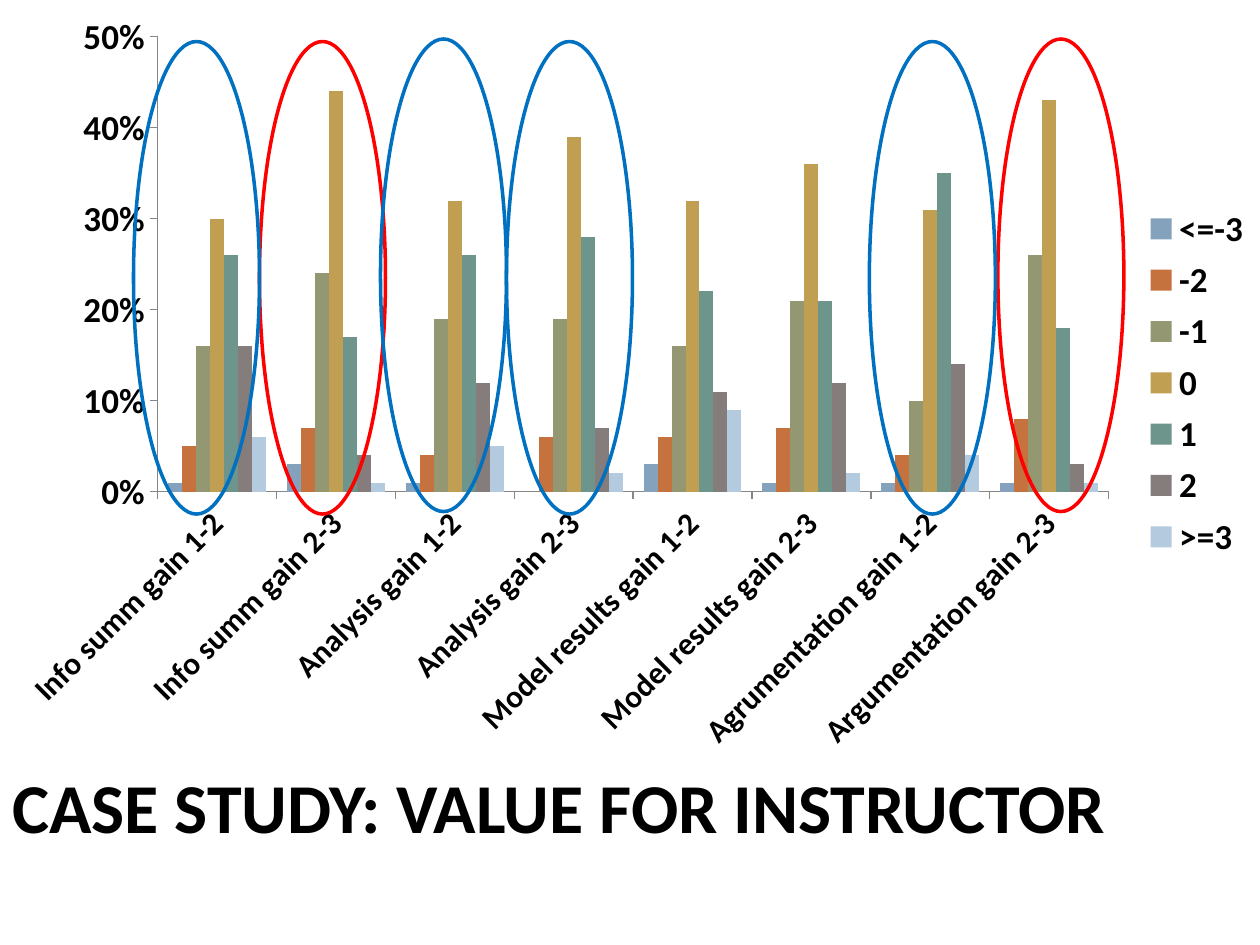
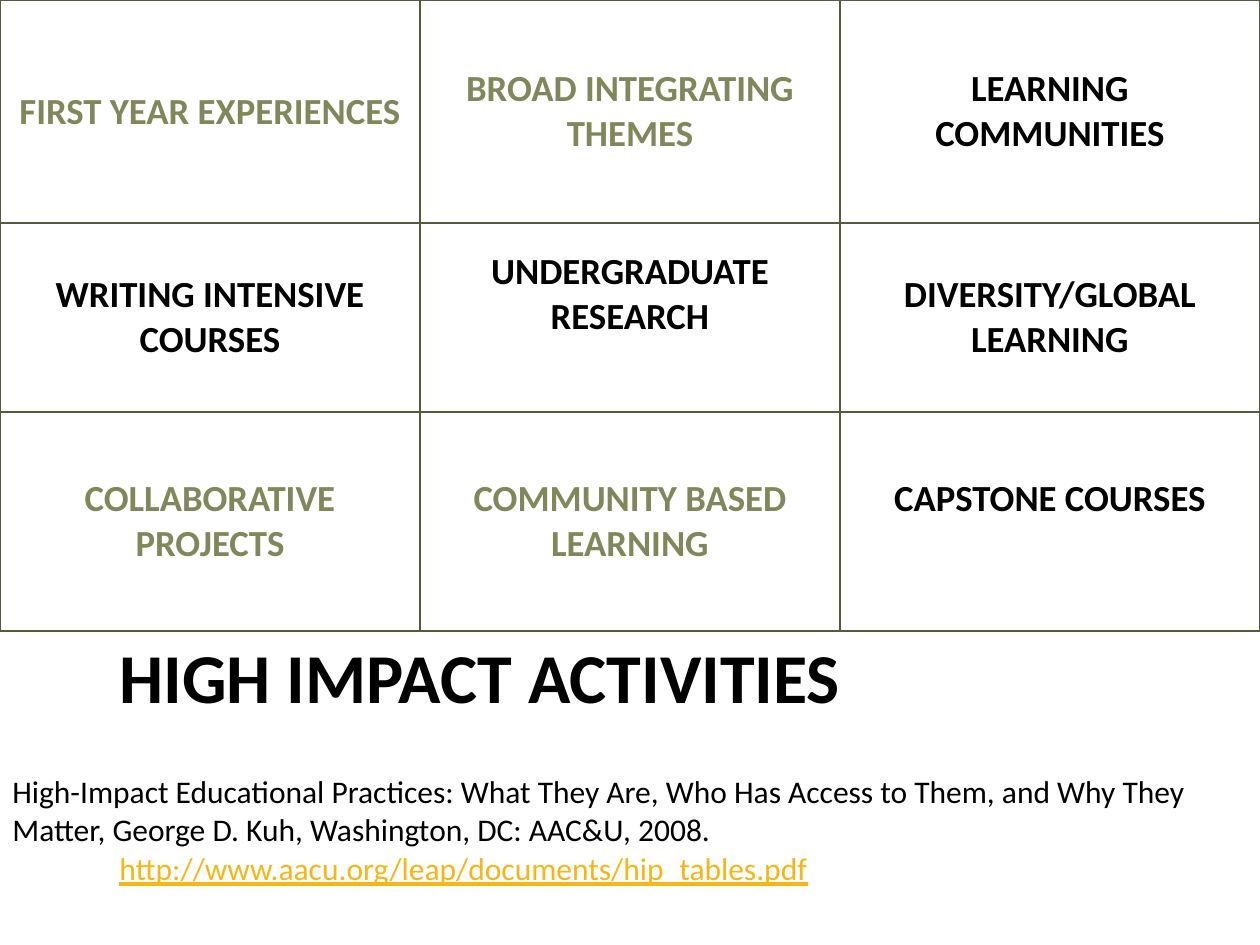
from lxml.etree import SubElement
from pptx import Presentation
from pptx.chart.data import CategoryChartData
from pptx.dml.color import RGBColor
from pptx.enum.chart import XL_CHART_TYPE, XL_LEGEND_POSITION, XL_TICK_MARK
from pptx.enum.shapes import MSO_SHAPE
from pptx.enum.text import MSO_ANCHOR, PP_ALIGN
from pptx.oxml.ns import qn
from pptx.util import Inches, Pt

FACE = "Calibri"
BLACK, OLIVE, GOLD = "000000", "81875A", "F7B615"
EDGE, GRAY = "565A3C", "868686"
RED, BLUE = "FF0000", "0070C0"

CATS = ["Info summ gain 1-2", "Info summ gain 2-3",
        "Analysis gain 1-2", "Analysis gain 2-3",
        "Model results gain 1-2", "Model results gain 2-3",
        "Agrumentation gain 1-2", "Argumentation gain 2-3"]
SERIES = [
    ("<=-3", "84A2BB", [0.01, 0.03, 0.01, 0, 0.03, 0.01, 0.01, 0.01]),
    ("-2", "C5723F", [0.05, 0.07, 0.04, 0.06, 0.06, 0.07, 0.04, 0.08]),
    ("-1", "939873", [0.16, 0.24, 0.19, 0.19, 0.16, 0.21, 0.1, 0.26]),
    ("0", "C09E52", [0.3, 0.44, 0.32, 0.39, 0.32, 0.36, 0.31, 0.43]),
    ("1", "6D958B", [0.26, 0.17, 0.26, 0.28, 0.22, 0.21, 0.35, 0.18]),
    ("2", "857C7C", [0.16, 0.04, 0.12, 0.07, 0.11, 0.12, 0.14, 0.03]),
    (">=3", "B4CADE", [0.06, 0.01, 0.05, 0.02, 0.09, 0.02, 0.04, 0.01]),
]
RINGS = [(7.92, 0.31, RED), (2.06, 0.33, RED), (1.06, 0.33, BLUE),
         (6.9, 0.33, BLUE), (3.02, 0.31, BLUE), (4.02, 0.33, BLUE)]

ROWS = [1.77, 1.5, 1.74]
CELLS = [
    [("FIRST YEAR EXPERIENCES", OLIVE), ("BROAD INTEGRATING THEMES", OLIVE),
     ("LEARNING COMMUNITIES", BLACK)],
    [("WRITING INTENSIVE COURSES", BLACK), ("UNDERGRADUATE RESEARCH", BLACK),
     ("DIVERSITY/GLOBAL LEARNING", BLACK)],
    [("COLLABORATIVE PROJECTS", OLIVE), ("COMMUNITY BASED LEARNING", OLIVE),
     ("CAPSTONE COURSES", BLACK)],
]
RAISED = {"UNDERGRADUATE RESEARCH", "CAPSTONE COURSES"}
SOURCE = ("High-Impact Educational Practices: What They Are, Who Has Access to "
          "Them, and Why They Matter, George D. Kuh, Washington, DC: AAC&U, 2008.")
LINK = "http://www.aacu.org/leap/documents/hip_tables.pdf"


def rgb(code):
    """Turn a hex string into a colour."""
    return RGBColor.from_string(code)


def style(font, size, color=BLACK, bold=False):
    """Set face, size, colour and weight of a font."""
    font.name, font.size, font.bold = FACE, Pt(size), bold
    font.color.rgb = rgb(color)


def add_text(slide, text, box, size=18, color=BLACK, bold=False):
    """Add a wrapped text box and return its paragraph."""
    frame = slide.shapes.add_textbox(*map(Inches, box)).text_frame
    frame.word_wrap = True
    para = frame.paragraphs[0]
    para.text = text
    style(para.font, size, color, bold)
    return para


def add_title(slide, text, box):
    """Add a slide title."""
    add_text(slide, text, box, 40, bold=True)


def add_ring(slide, left, top, color):
    """Add a hollow ellipse around a group of columns."""
    ring = slide.shapes.add_shape(
        MSO_SHAPE.OVAL, Inches(left), Inches(top), Inches(1), Inches(3.75))
    ring.shadow.inherit = False
    ring.fill.background()
    ring.line.color.rgb = rgb(color)
    ring.line.width = Pt(2)


def place(part, index, box, inner=False):
    """Fix a chart part at fractions of the chart's size."""
    for old in part.findall(qn("c:layout")):
        part.remove(old)
    layout = SubElement(part, qn("c:layout"))
    part.insert(index, layout)
    manual = SubElement(layout, qn("c:manualLayout"))
    pairs = [("layoutTarget", "inner")] if inner else []
    pairs += [("xMode", "edge"), ("yMode", "edge"), *zip("xywh", box)]
    for tag, val in pairs:
        SubElement(manual, qn(f"c:{tag}")).set("val", str(val))


def set_axis(axis, size):
    """Style an axis and its labels."""
    axis.has_major_gridlines = False
    axis.major_tick_mark = XL_TICK_MARK.OUTSIDE
    axis.minor_tick_mark = XL_TICK_MARK.NONE
    axis.format.line.color.rgb = rgb(GRAY)
    style(axis.tick_labels.font, size, bold=True)


def add_gains(slide):
    """Add the column chart of gains."""
    data = CategoryChartData(number_format="0%")
    data.categories = CATS
    for name, _, vals in SERIES:
        data.add_series(name, vals)
    chart = slide.shapes.add_chart(
        XL_CHART_TYPE.COLUMN_CLUSTERED, 0, 0, Inches(10), Inches(6.08), data).chart
    style(chart.font, 10)
    chart.has_title = False
    plot = chart.plots[0]
    plot.gap_width, plot.overlap, plot.vary_by_categories = 150, 0, False
    plot.gap_width = 150
    for bar, (_, color, _) in zip(plot.series, SERIES):
        bar.format.fill.solid()
        bar.format.fill.fore_color.rgb = rgb(color)
        bar.invert_if_negative = False

    set_axis(chart.category_axis, 18)
    chart.category_axis._element.txPr.bodyPr.set("rot", "-2700000")
    scale = chart.value_axis
    set_axis(scale, 20)
    scale.minimum_scale, scale.maximum_scale, scale.major_unit = 0, 0.5, 0.1
    scale.tick_labels.number_format = "0%"
    scale.tick_labels.number_format_is_linked = False

    chart.has_legend = True
    legend = chart.legend
    legend.position = XL_LEGEND_POSITION.RIGHT
    legend.include_in_layout = False
    style(legend.font, 20, bold=True)
    place(legend._element, 1, (0.9, 0.26, 0.1, 0.48))
    area = chart._chartSpace.find(".//" + qn("c:plotArea"))
    place(area, 0, (0.125, 0.048, 0.755, 0.594), inner=True)


def add_edges(cell):
    """Draw thin lines on all sides of a cell."""
    props = cell._tc.get_or_add_tcPr()
    for side in "LRTB":
        line = SubElement(props, qn(f"a:ln{side}"), w=str(Pt(1)))
        fill = SubElement(line, qn("a:solidFill"))
        SubElement(fill, qn("a:srgbClr"), val=EDGE)


def fill_cell(cell, text, color):
    """Write and style one activity."""
    add_edges(cell)
    cell.fill.background()
    cell.vertical_anchor = MSO_ANCHOR.MIDDLE
    cell.margin_left = cell.margin_right = Inches(0.11)
    cell.margin_top = Inches(0.06)
    cell.margin_bottom = Inches(0.42 if text in RAISED else 0.06)
    para = cell.text_frame.paragraphs[0]
    para.text = text
    para.alignment = PP_ALIGN.CENTER
    style(para.font, 21, color, True)


def add_grid(slide):
    """Add the table of activities."""
    table = slide.shapes.add_table(
        3, 3, 0, 0, Inches(10), Inches(sum(ROWS))).table
    table.first_row = table.horz_banding = False
    for col in table.columns:
        col.width = Inches(10 / 3)
    for r, (high, line) in enumerate(zip(ROWS, CELLS)):
        table.rows[r].height = Inches(high)
        for c, (text, color) in enumerate(line):
            fill_cell(table.cell(r, c), text, color)


def main():
    """Build both slides and save them."""
    deck = Presentation()
    deck.slide_width, deck.slide_height = Inches(10), Inches(7.5)
    blank = deck.slide_layouts[6]

    value = deck.slides.add_slide(blank)
    add_title(value, "CASE STUDY: VALUE FOR INSTRUCTOR", (0, 6.01, 9.29, 1.49))
    add_gains(value)
    for ring in RINGS:
        add_ring(value, *ring)

    impact = deck.slides.add_slide(blank)
    add_title(impact, "HIGH IMPACT ACTIVITIES", (0.85, 4.98, 8.5, 1.49))
    link = add_text(impact, LINK, (0.85, 6.69, 6.57, 0.4), color=GOLD)
    link.font.underline = True
    add_grid(impact)
    add_text(impact, SOURCE, (0, 6.08, 10, 0.71))

    deck.save("out.pptx")


if __name__ == "__main__":
    main()
